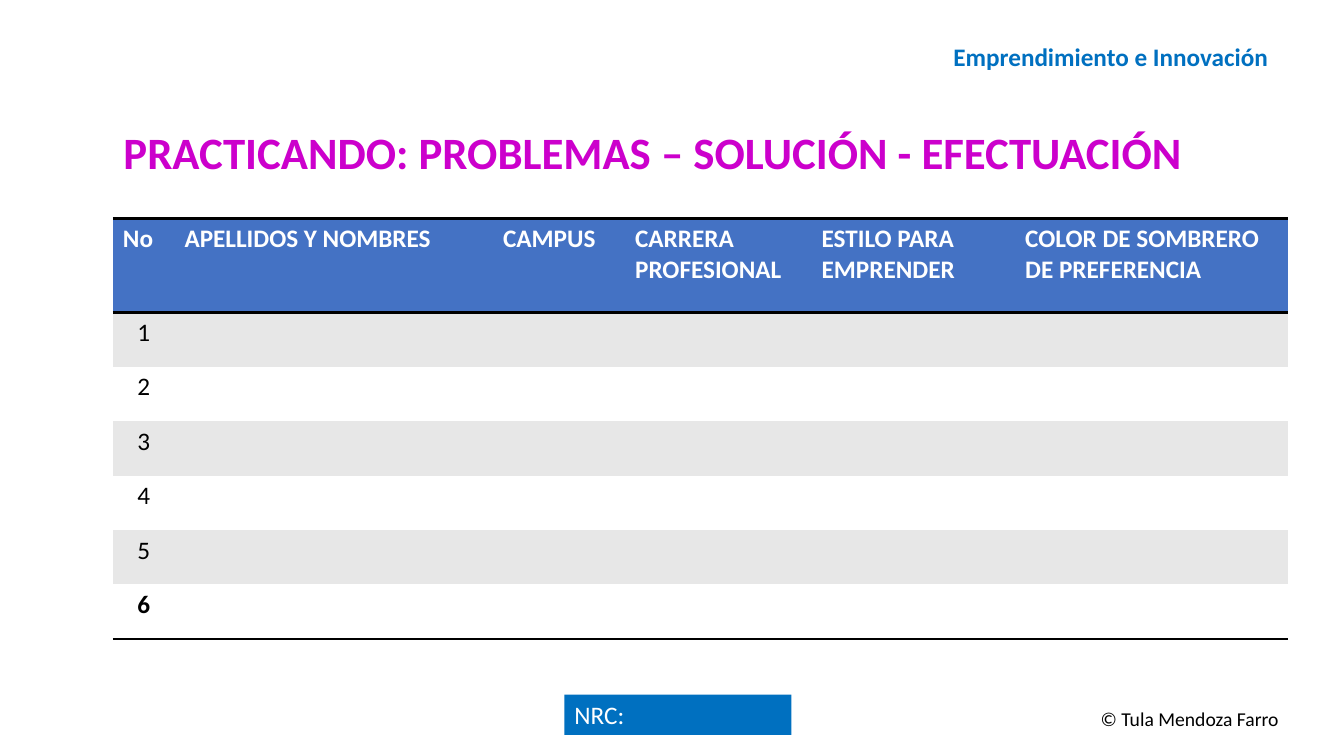
from dataclasses import dataclass

from lxml import etree
from pptx import Presentation
from pptx.dml.color import RGBColor
from pptx.enum.shapes import MSO_SHAPE
from pptx.enum.text import MSO_ANCHOR, PP_ALIGN
from pptx.oxml.ns import qn
from pptx.util import Inches, Pt

LEFT, CENTER = PP_ALIGN.LEFT, PP_ALIGN.CENTER
TOP, MIDDLE, BOTTOM = MSO_ANCHOR.TOP, MSO_ANCHOR.MIDDLE, MSO_ANCHOR.BOTTOM
RECTANGLE = MSO_SHAPE.RECTANGLE

FONT = "Calibri"
COLORS = {
    "title": "CC00CC", "blue": "0070C0", "header": "4472C4",
    "band": "E7E7E7", "white": "FFFFFF", "black": "000000",
}
NO_STYLE = "{2D5ABB26-0587-4C30-8999-92F81FD0307C}"

# Grid of 100 columns by 100 rows over the slide
SLIDE_W, SLIDE_H = Inches(13.33), Inches(7.5)


def cols(n: float) -> int:
    return round(SLIDE_W * n / 100)


def rows(n: float) -> int:
    return round(SLIDE_H * n / 100)


@dataclass
class Label:
    text: str
    x: float
    y: float
    w: float
    h: float
    size: int
    color: str
    bold: bool = False
    align: PP_ALIGN = LEFT
    anchor: MSO_ANCHOR = TOP
    spacing: float = 1.0
    wrap: bool = True
    fill: str = ""


@dataclass
class Column:
    heading: str
    width: float


LABELS = [
    Label("PRACTICANDO: PROBLEMAS – SOLUCIÓN - EFECTUACIÓN", 8.4, 14.53, 80.4, 9.87,
          32, "title", bold=True, align=CENTER, anchor=BOTTOM, spacing=0.9, wrap=False),
    Label("Emprendimiento e Innovación", 70.2, 4.8, 25.05, 5.33,
          18, "blue", bold=True, wrap=False),
    Label("NRC:", 42, 91.87, 16.88, 5.33, 18, "white", anchor=MIDDLE, fill="blue"),
    Label("© Tula Mendoza Farro", 81.15, 92.8, 15.3, 4.53, 14, "black"),
]

COLUMNS = [
    Column("No", 4.58),
    Column("APELLIDOS Y NOMBRES", 23.7),
    Column("CAMPUS", 9.83),
    Column("CARRERA PROFESIONAL", 13.88),
    Column("ESTILO PARA EMPRENDER", 15.15),
    Column("COLOR DE SOMBRERO DE PREFERENCIA", 20.33),
]
TABLE_X, TABLE_Y = 8.4, 28.93
HEADER_H, ROW_H = 12.4, 7.2
STUDENTS = 6


def rgb(name: str) -> RGBColor:
    return RGBColor.from_string(COLORS[name])


def write(tf, text: str, *, size: int = 18, color: str = "black", bold: bool = False,
          align: PP_ALIGN = LEFT, spacing: float = 1.0) -> None:
    p = tf.paragraphs[0]
    p.alignment = align
    p.line_spacing = spacing
    r = p.add_run()
    r.text = text
    r.font.name = FONT
    r.font.size = Pt(size)
    r.font.bold = bold
    r.font.color.rgb = rgb(color)


def add_label(s, label: Label) -> None:
    box = cols(label.x), rows(label.y), cols(label.w), rows(label.h)
    if label.fill:
        sp = s.shapes.add_shape(RECTANGLE, *box)
        sp.shadow.inherit = False
        sp.fill.solid()
        sp.fill.fore_color.rgb = rgb(label.fill)
        sp.line.fill.background()
    else:
        sp = s.shapes.add_textbox(*box)
    tf = sp.text_frame
    tf.word_wrap = label.wrap
    tf.vertical_anchor = label.anchor
    write(tf, label.text, size=label.size, color=label.color, bold=label.bold,
          align=label.align, spacing=label.spacing)


def add_border(cell, side: str) -> None:
    ln = etree.SubElement(cell._tc.get_or_add_tcPr(), qn(f"a:ln{side}"), w=str(Pt(2)))
    fill = etree.SubElement(ln, qn("a:solidFill"))
    etree.SubElement(fill, qn("a:srgbClr"), val=COLORS["black"])


def format_cell(cell, fill: str, borders: str = "") -> None:
    # Borders come before the fill in the cell properties
    for side in borders:
        add_border(cell, side)
    cell.fill.solid()
    cell.fill.fore_color.rgb = rgb(fill)


def add_student_table(s) -> None:
    width = sum(column.width for column in COLUMNS)
    height = HEADER_H + STUDENTS * ROW_H
    frame = s.shapes.add_table(STUDENTS + 1, len(COLUMNS), cols(TABLE_X), rows(TABLE_Y),
                               cols(width), rows(height))
    table = frame.table
    table.first_row = table.horz_banding = False
    table._tbl.tblPr.find(qn("a:tableStyleId")).text = NO_STYLE

    # Header row
    table.rows[0].height = rows(HEADER_H)
    for i, column in enumerate(COLUMNS):
        table.columns[i].width = cols(column.width)
        cell = table.cell(0, i)
        format_cell(cell, "header", "TB")
        write(cell.text_frame, column.heading, color="white", bold=True)

    # Numbered rows, banded; the last one closes the table
    for n in range(1, STUDENTS + 1):
        last = n == STUDENTS
        table.rows[n].height = rows(ROW_H)
        for i in range(len(COLUMNS)):
            format_cell(table.cell(n, i), "band" if n % 2 else "white", "B" if last else "")
        write(table.cell(n, 0).text_frame, str(n), bold=last, align=CENTER)


def main() -> None:
    prs = Presentation()
    prs.slide_width, prs.slide_height = SLIDE_W, SLIDE_H
    s = prs.slides.add_slide(prs.slide_layouts[6])
    add_student_table(s)
    for label in LABELS:
        add_label(s, label)
    prs.save("out.pptx")


if __name__ == "__main__":
    main()
